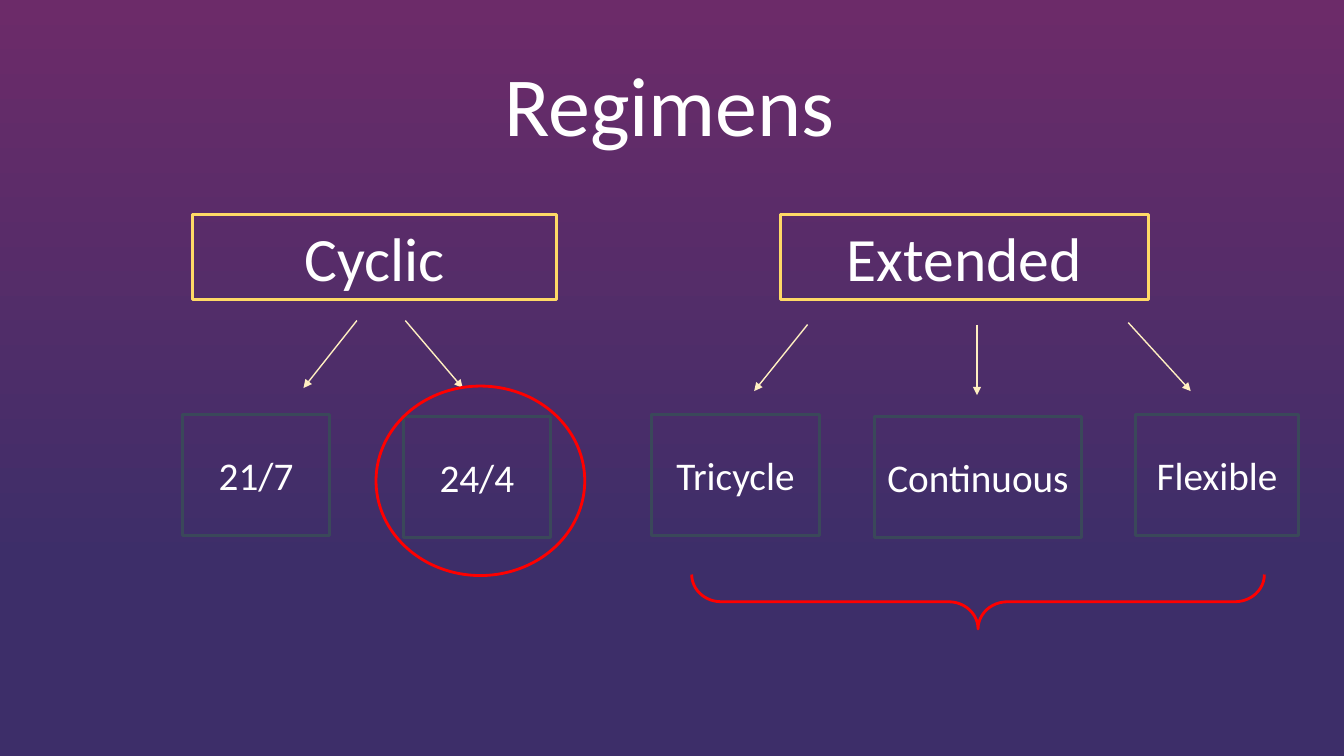
import lxml.etree
import pptx
import pptx.dml.color
import pptx.enum.dml
import pptx.enum.shapes
import pptx.enum.text
import pptx.oxml.ns
import pptx.util

COLOURS = {
    "sky": "6C2B69",
    "ground": "3D2E69",
    "text": "FFFFFF",
    "heading": "FFD966",
    "option": "3A485A",
    "arrow": "FFEFC1",
    "mark": "FF0000",
}
SLIDE_WIDTH, SLIDE_HEIGHT = 13.33, 7.5
ROWS = 30
CELL = SLIDE_HEIGHT / ROWS
HEADING_HEIGHT, OPTION_TOP, OPTION_HEIGHT = 3.36, 7.92, 4.8
TITLE_BOX = (1.6, 2.32, 49.92, 3.8)
FORMATS = {
    "title": {"size": pptx.util.Pt(60), "name": "Calibri", "bold": False},
    "heading": {"size": pptx.util.Pt(44), "name": "Calibri"},
    "option": {"size": pptx.util.Pt(28), "name": "Calibri"},
}
SHAPES = pptx.enum.shapes.MSO_SHAPE
ANCHOR = pptx.enum.text.MSO_ANCHOR
REGIMENS = [
    {
        "origin": (7.24, 8.52),
        "heading": ("Cyclic", 0.4, 14.44),
        "options": [("21/7", 0, 0, 5.84), ("24/4", 8.76, 0.08, 5.84)],
        "arrows": [(6.92, 4.2, 4.8, 6.88), (8.84, 4.2, 11.12, 6.88)],
        "mark": (SHAPES.OVAL, (7.68, 6.8, 8.28, 7.52), 0, []),
    },
    {
        "origin": (25.84, 8.52),
        "heading": ("Extended", 5.12, 14.6),
        "options": [
            ("Tricycle", 0, 0, 6.68),
            ("Continuous", 8.84, 0.08, 8.24),
            ("Flexible", 19.2, 0, 6.48),
        ],
        "arrows": [
            (6.2, 4.36, 4.08, 7),
            (12.92, 4.36, 12.92, 7.16),
            (18.92, 4.28, 21.4, 7),
        ],
        "mark": (SHAPES.RIGHT_BRACE, (11.88, 4, 2.16, 22.72), 90, [0.54, 0.5]),
    },
]


def colour(part):
    """Return the colour of a part of the slide."""
    return pptx.dml.color.RGBColor.from_string(COLOURS[part])


def cells(*counts):
    """Turn counts of grid cells into lengths."""
    return [pptx.util.Inches(count * CELL) for count in counts]


def write(frame, text, role, anchor):
    """Write one centred line in the format of its role."""
    frame.word_wrap = True
    frame.vertical_anchor = anchor
    paragraph = frame.paragraphs[0]
    paragraph.alignment = pptx.enum.text.PP_ALIGN.CENTER
    run = paragraph.add_run()
    run.text = text
    for attribute, value in FORMATS[role].items():
        setattr(run.font, attribute, value)
    run.font.color.rgb = colour("text")
    return paragraph


def add_outline(slide, preset, box, role):
    """Add an unfilled shape with the line colour of its role."""
    outline = slide.shapes.add_shape(preset, *cells(*box))
    outline.shadow.inherit = False
    outline.fill.background()
    outline.line.color.rgb = colour(role)
    outline.line.width = pptx.util.Pt(2)
    return outline


def add_arrow(slide, ends):
    """Add a thin arrow from a heading to an option."""
    arrow = slide.shapes.add_connector(
        pptx.enum.shapes.MSO_CONNECTOR.STRAIGHT, *cells(*ends))
    arrow.line.color.rgb = colour("arrow")
    arrow.line.width = pptx.util.Pt(1)
    lxml.etree.SubElement(
        arrow.line._get_or_add_ln(), pptx.oxml.ns.qn("a:tailEnd"), type="triangle")
    lxml.etree.SubElement(
        arrow._element.spPr, pptx.oxml.ns.qn("a:effectLst"))


def add_title(slide, text, box):
    """Place and fill the title over the gradient background."""
    backdrop = slide.background.fill
    backdrop.gradient()
    backdrop.gradient_angle = 270
    for stop, position, part in zip(
            backdrop.gradient_stops, (0, 0.75), ("sky", "ground")):
        stop.position = position
        stop.color.rgb = colour(part)
    title = slide.shapes.title
    title.left, title.top, title.width, title.height = cells(*box)
    paragraph = write(title.text_frame, text, "title", ANCHOR.TOP)
    paragraph.line_spacing = 0.9


def add_regimen(slide, origin, heading, options, arrows, mark):
    """Draw a heading, its options, their arrows and a red mark from an origin."""
    left, top = origin
    label, column, width = heading
    box = (left + column, top, width, HEADING_HEIGHT)
    frame = add_outline(slide, SHAPES.RECTANGLE, box, "heading").text_frame
    write(frame, label, "heading", ANCHOR.TOP)
    for label, column, drop, width in options:
        box = (left + column, top + OPTION_TOP + drop, width, OPTION_HEIGHT)
        frame = add_outline(slide, SHAPES.RECTANGLE, box, "option").text_frame
        write(frame, label, "option", ANCHOR.MIDDLE)
    for start_x, start_y, end_x, end_y in arrows:
        add_arrow(slide, (left + start_x, top + start_y, left + end_x, top + end_y))
    preset, (column, row, width, height), rotation, adjustments = mark
    highlight = add_outline(
        slide, preset, (left + column, top + row, width, height), "mark")
    highlight.rotation = rotation
    for index, value in enumerate(adjustments):
        highlight.adjustments[index] = value


def main():
    """Build and save the slide."""
    deck = pptx.Presentation()
    deck.slide_width = pptx.util.Inches(SLIDE_WIDTH)
    deck.slide_height = pptx.util.Inches(SLIDE_HEIGHT)
    slide = deck.slides.add_slide(deck.slide_layouts.get_by_name("Title Only"))
    add_title(slide, "Regimens", TITLE_BOX)
    for regimen in REGIMENS:
        add_regimen(slide, **regimen)
    deck.save("out.pptx")


if __name__ == "__main__":
    main()
